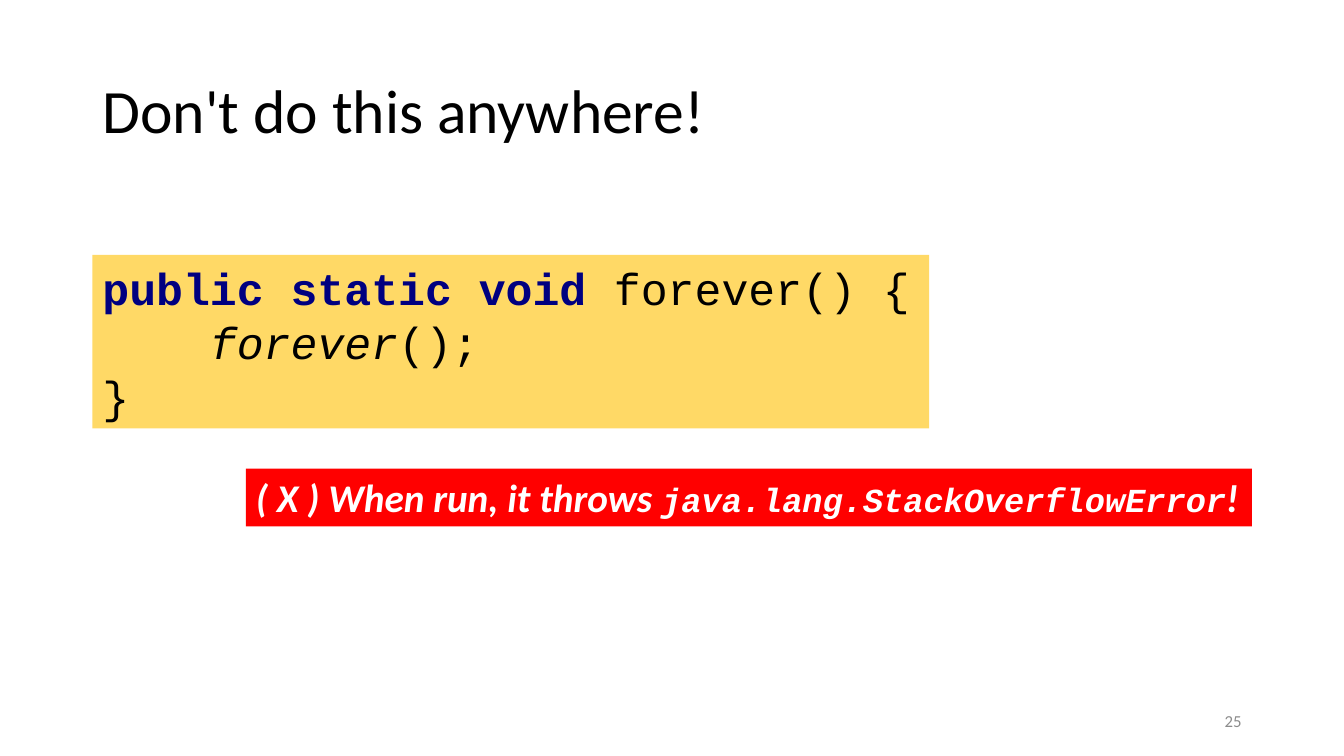
from pptx import Presentation
from pptx.dml.color import RGBColor
from pptx.enum.shapes import MSO_SHAPE
from pptx.enum.text import MSO_ANCHOR, MSO_AUTO_SIZE, PP_ALIGN
from pptx.util import Inches, Pt

RECT = MSO_SHAPE.RECTANGLE
MIDDLE, TOP = MSO_ANCHOR.MIDDLE, MSO_ANCHOR.TOP
NO_FIT = MSO_AUTO_SIZE.NONE
LEFT, RIGHT = PP_ALIGN.LEFT, PP_ALIGN.RIGHT

COLORS = {
    "text": "000000",
    "keyword": "000080",
    "code": "FFD966",
    "error": "FF0000",
    "light": "FFFFFF",
    "muted": "8C8C8C",
}
SANS, MONO = "Calibri", "Courier New"
TITLE_LAYOUT = 5
MARGIN, CONTENT = 6.88, 86.25
CODE_SIZE = 32
CODE_INDENT = Pt(4 * 0.6 * CODE_SIZE)


class SlideBuilder:
    def __init__(self, prs):
        self.prs = prs
        self.slide = prs.slides.add_slide(prs.slide_layouts[TITLE_LAYOUT])

    def box(self, x, y, w, h):
        sw, sh = self.prs.slide_width, self.prs.slide_height
        return [int(v * side / 100) for v, side in ((x, sw), (y, sh), (w, sw), (h, sh))]

    def font(self, font, size=None, name=None, color=None, bold=None, italic=None):
        if size:
            font.size = Pt(size)
        if name:
            font.name = name
        if color:
            font.color.rgb = RGBColor.from_string(COLORS[color])
        font.bold, font.italic = bold, italic

    def frame(self, sp, anchor, wrap):
        tf = sp.text_frame
        tf.auto_size = NO_FIT
        tf.word_wrap = wrap
        tf.vertical_anchor = anchor
        return tf

    def title(self, text, *place):
        sp = self.slide.shapes.title
        sp.left, sp.top, sp.width, sp.height = self.box(*place)
        tf = self.frame(sp, MIDDLE, True)
        tf.text = text
        p = tf.paragraphs[0]
        p.alignment, p.line_spacing = LEFT, 0.9
        self.font(p.font, 44, SANS, "text")

    def text(self, text, *place):
        sp = self.slide.shapes.add_textbox(*self.box(*place))
        tf = self.frame(sp, MIDDLE, True)
        tf.text = text
        p = tf.paragraphs[0]
        p.alignment = RIGHT
        self.font(p.font, 12, SANS, "muted")

    def panel(self, fill, lines, style, anchor, *place):
        sp = self.slide.shapes.add_shape(RECT, *self.box(*place))
        sp.shadow.inherit = False
        sp.fill.solid()
        sp.fill.fore_color.rgb = RGBColor.from_string(COLORS[fill])
        sp.line.fill.background()
        tf = self.frame(sp, anchor, False)
        for i, (indent, runs) in enumerate(lines):
            p = tf.add_paragraph() if i else tf.paragraphs[0]
            p.alignment = LEFT
            if indent:
                p._p.get_or_add_pPr().set("marL", str(indent))
            for text, changes in runs:
                r = p.add_run()
                r.text = text
                self.font(r.font, **{**style, **changes})


def main():
    prs = Presentation()
    prs.slide_width, prs.slide_height = Inches(13.33), Inches(7.5)
    s = SlideBuilder(prs)
    s.title("Don't do this anywhere!", MARGIN, 5.33, CONTENT, 19.33)
    s.text("25", 70.63, 92.67, 22.5, 5.33)
    code = [
        (0, [("public static void ", {"color": "keyword", "bold": True}),
             ("forever() {", {})]),
        (CODE_INDENT, [("forever", {"italic": True}), ("();", {})]),
        (0, [("}", {})]),
    ]
    s.panel("code", code, {"size": CODE_SIZE, "name": MONO, "color": "text"},
            MIDDLE, MARGIN, 33.73, 62.25, 22.93)
    error = [
        (0, [("( X ) When run, it throws ", {}),
             ("java.lang.StackOverflowError", {"size": 24, "name": MONO}),
             ("!", {})]),
    ]
    style = {"size": 28, "name": SANS, "color": "light", "bold": True, "italic": True}
    s.panel("error", error, style, TOP, 18.3, 62, 74.85, 7.63)
    prs.save("out.pptx")


if __name__ == "__main__":
    main()
